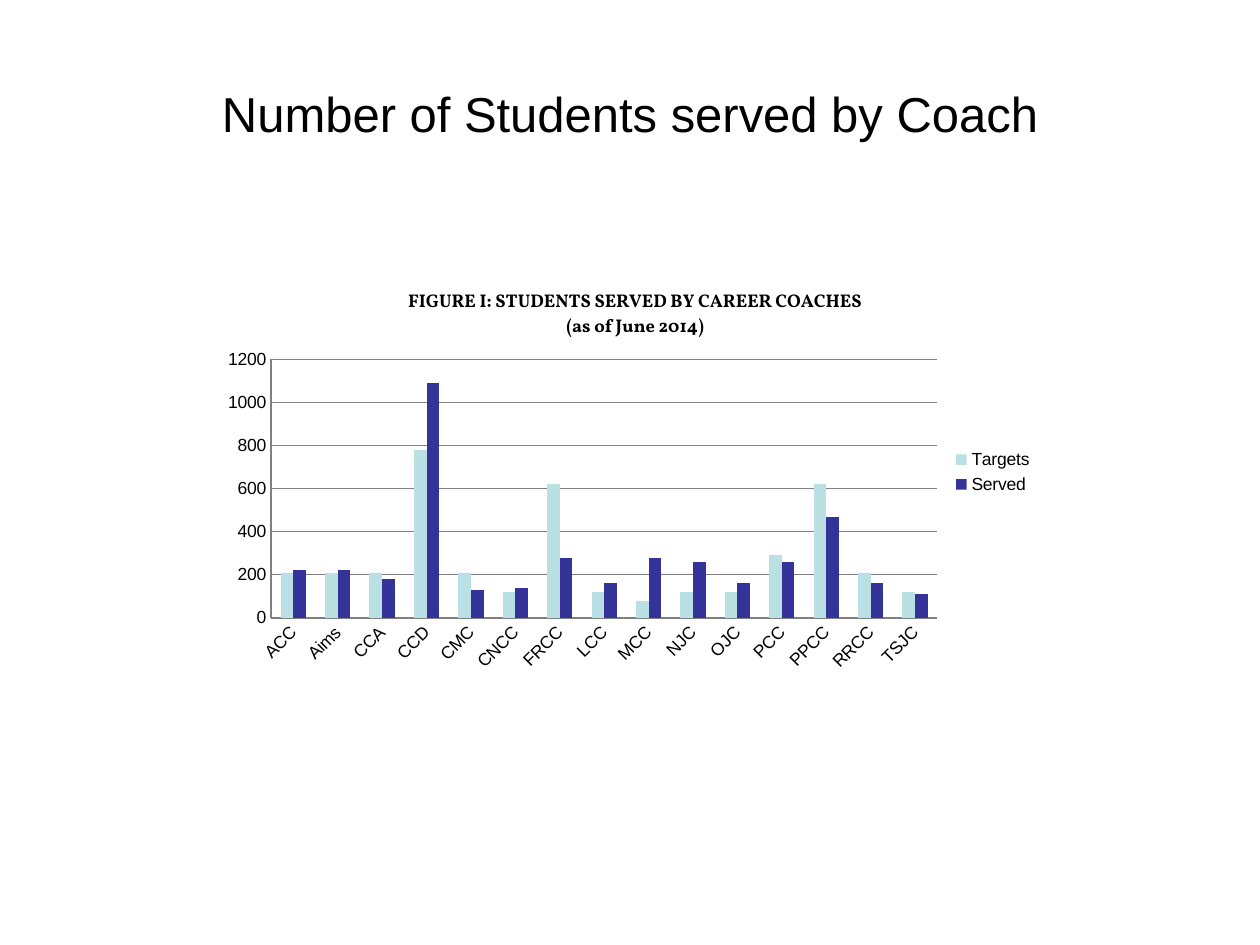
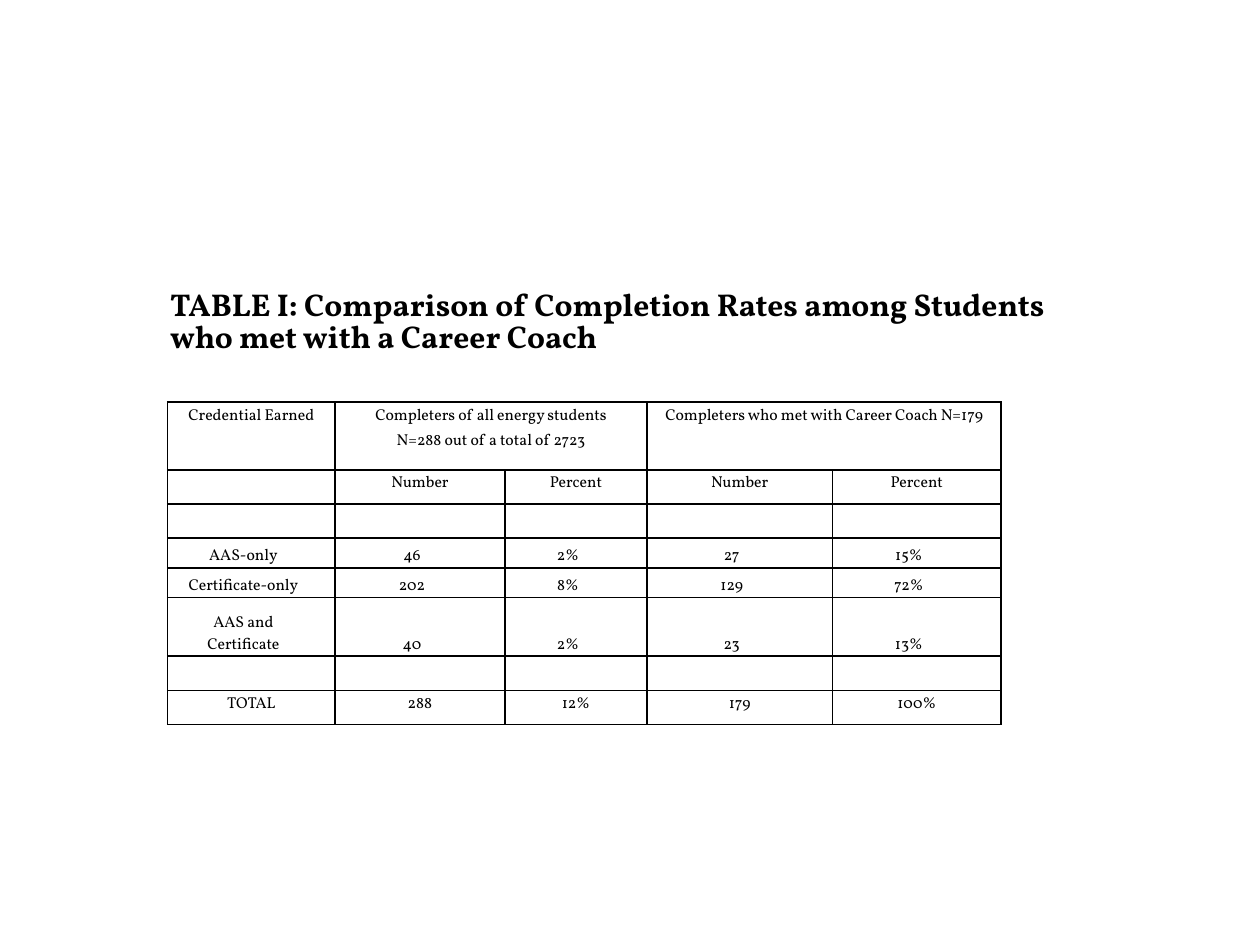
from lxml import etree
from pptx import Presentation
from pptx import util as u
from pptx.chart.data import CategoryChartData
from pptx.dml.color import RGBColor
from pptx.enum import chart as ch, text
from pptx.oxml.ns import qn

BLACK = RGBColor(0x00, 0x00, 0x00)
GRAY = RGBColor(0x80, 0x80, 0x80)
TARGET_BLUE = RGBColor(0xBB, 0xE0, 0xE3)
SERVED_BLUE = RGBColor(0x33, 0x33, 0x99)
SANS, SERIF = "Arial", "Vollkorn"
CENTER = text.PP_ALIGN.CENTER


def write(tf, lines, para, font):
    """Put one paragraph per line into tf, with the given formats."""
    for i, line in enumerate(lines):
        p = tf.paragraphs[0] if i == 0 else tf.add_paragraph()
        for name, value in para.items():
            setattr(p, name, value)
        r = p.add_run()
        r.text = line
        r.font.color.rgb = BLACK
        for name, value in font.items():
            setattr(r.font, name, value)


def place(parent, x, y, w=None, h=None):
    """Give a chart part a fixed place, as fractions of the chart."""
    old = parent.find(qn("c:layout"))
    if old is not None:
        parent.remove(old)
    layout = etree.Element(qn("c:layout"))
    manual = etree.SubElement(layout, qn("c:manualLayout"))
    parts = [("xMode", "edge"), ("yMode", "edge"), ("x", x), ("y", y)]
    if w:
        parts = [("layoutTarget", "inner")] + parts + [("w", w), ("h", h)]
    for name, value in parts:
        etree.SubElement(manual, qn("c:" + name)).set("val", str(value))
    tx = parent.find(qn("c:tx"))
    parent.insert(0 if tx is None else 1, layout)


prs = Presentation()
prs.slide_width, prs.slide_height = u.Cm(25.4), u.Cm(19.05)
blank = prs.slide_layouts[6]

# Slide 1: students served, by college
s = prs.slides.add_slide(blank)
tf = s.shapes.add_textbox(u.Cm(1.27), u.Cm(1.4), u.Cm(22.86), u.Cm(2.84)).text_frame
tf.word_wrap = True
tf.margin_top = u.Cm(0.28)
write(tf, ["Number of Students served by Coach"], {"alignment": CENTER},
      {"name": SANS, "size": u.Pt(28)})

colleges = ["ACC", "Aims", "CCA", "CCD", "CMC", "CNCC", "FRCC", "LCC",
            "MCC", "NJC", "OJC", "PCC", "PPCC", "RRCC", "TSJC"]
series = [
    ("Targets", TARGET_BLUE, [210, 210, 210, 780, 210, 120, 620, 120,
                              80, 120, 120, 290, 620, 210, 120]),
    ("Served", SERVED_BLUE, [220, 220, 180, 1090, 130, 140, 280, 160,
                             280, 260, 160, 260, 470, 160, 110]),
]
data = CategoryChartData()
data.categories = colleges
for name, _, values in series:
    data.add_series(name, values)
chart = s.shapes.add_chart(ch.XL_CHART_TYPE.COLUMN_CLUSTERED, u.Cm(4.29), u.Cm(5.31),
                           u.Cm(16.79), u.Cm(8.41), data).chart
for name, value in {"name": SANS, "size": u.Pt(10)}.items():
    setattr(chart.font, name, value)
chart.font.color.rgb = BLACK

write(chart.chart_title.text_frame,
      ["FIGURE I: STUDENTS SERVED BY CAREER COACHES", "(as of June 2014)"],
      {"alignment": CENTER}, {"name": SERIF, "size": u.Pt(10.5), "bold": True})
chart.chart_title.include_in_layout = False
place(chart.chart_title._element, 0.23, 0.05)

plot = chart.plots[0]
plot.gap_width, plot.overlap, plot.vary_by_categories = 150, 0, False
for bars, (_, color, _) in zip(plot.series, series):
    bars.format.fill.solid()
    bars.format.fill.fore_color.rgb = color
place(chart._chartSpace.chart.plotArea, 0.07, 0.23, 0.8, 0.62)

chart.has_legend = True
chart.legend.position = ch.XL_LEGEND_POSITION.RIGHT
chart.legend.include_in_layout = False

values, cats = chart.value_axis, chart.category_axis
values.minimum_scale, values.maximum_scale, values.major_unit = 0, 1200, 200
values.has_major_gridlines = True
for axis in (values, cats):
    axis.major_tick_mark = ch.XL_TICK_MARK.NONE
for line in (values.major_gridlines.format.line, values.format.line, cats.format.line):
    line.color.rgb = GRAY
    line.width = u.Pt(0.75)
cats.tick_labels.font.size = u.Pt(10)
cats._element.find(qn("c:txPr")).find(qn("a:bodyPr")).set("rot", "-2700000")

# Slide 2: completion rates
s = prs.slides.add_slide(blank)
rows = [
    ["Credential Earned", "Completers of all energy students\nN=288 out of a total of 2723",
     "", "Completers who met with Career Coach N=179", ""],
    ["", "Number", "Percent", "Number", "Percent"],
    [""] * 5,
    ["AAS-only", "46", "2%", "27", "15%"],
    ["Certificate-only", "202", "8%", "129", "72%"],
    ["AAS and Certificate", "40", "2%", "23", "13%"],
    [""] * 5,
    ["TOTAL", "288", "12%", "179", "100%"],
]
widths = [3.37, 3.43, 2.86, 3.74, 3.4]
heights = [1.37, 0.69, 0.69, 0.6, 0.6, 1.18, 0.69, 0.69]
credential_rows = (3, 4, 5)

table = s.shapes.add_table(len(rows), len(widths), u.Cm(3.38), u.Cm(8.1),
                           u.Cm(sum(widths)), u.Cm(sum(heights))).table
table.first_row = table.horz_banding = False
for column, width in zip(table.columns, widths):
    column.width = u.Cm(width)
for row, height in zip(table.rows, heights):
    row.height = u.Cm(height)
for col in (1, 3):
    table.cell(0, col).merge(table.cell(0, col + 1))

for i, row in enumerate(rows):
    is_credential = i in credential_rows
    for j, content in enumerate(row):
        cell = table.cell(i, j)
        cell.fill.background()
        cell.margin_top = cell.margin_bottom = 0
        cell.margin_left = u.Cm(0.18)
        cell.margin_right = u.Cm(0.5 if is_credential else 0.18)
        cell.vertical_anchor = text.MSO_ANCHOR.BOTTOM if is_credential else text.MSO_ANCHOR.TOP
        if content:
            write(cell.text_frame, content.split("\n"),
                  {"alignment": CENTER, "line_spacing": 1.0 if is_credential else 1.15},
                  {"name": SERIF, "size": u.Pt(9)})
        else:
            end = etree.SubElement(cell.text_frame.paragraphs[0]._p, qn("a:endParaRPr"))
            end.set("sz", "900")
        tc_pr = cell._tc.get_or_add_tcPr()
        for k, side in enumerate(("lnL", "lnR", "lnT", "lnB")):
            ln = etree.Element(qn("a:" + side), w=str(u.Pt(1)))
            fill = etree.SubElement(ln, qn("a:solidFill"))
            etree.SubElement(fill, qn("a:srgbClr")).set("val", str(BLACK))
            tc_pr.insert(k, ln)

tf = s.shapes.add_textbox(u.Cm(3.18), u.Cm(5.54), u.Cm(18.21), u.Cm(2.57)).text_frame
tf.word_wrap = True
tf.margin_top, tf.margin_right = u.Cm(0.32), 0
write(tf, ["TABLE I: Comparison of Completion Rates among Students",
           "who met with a Career Coach"],
      {"line_spacing": 0.85}, {"name": SERIF, "size": u.Pt(18), "bold": True})

prs.save("out.pptx")
